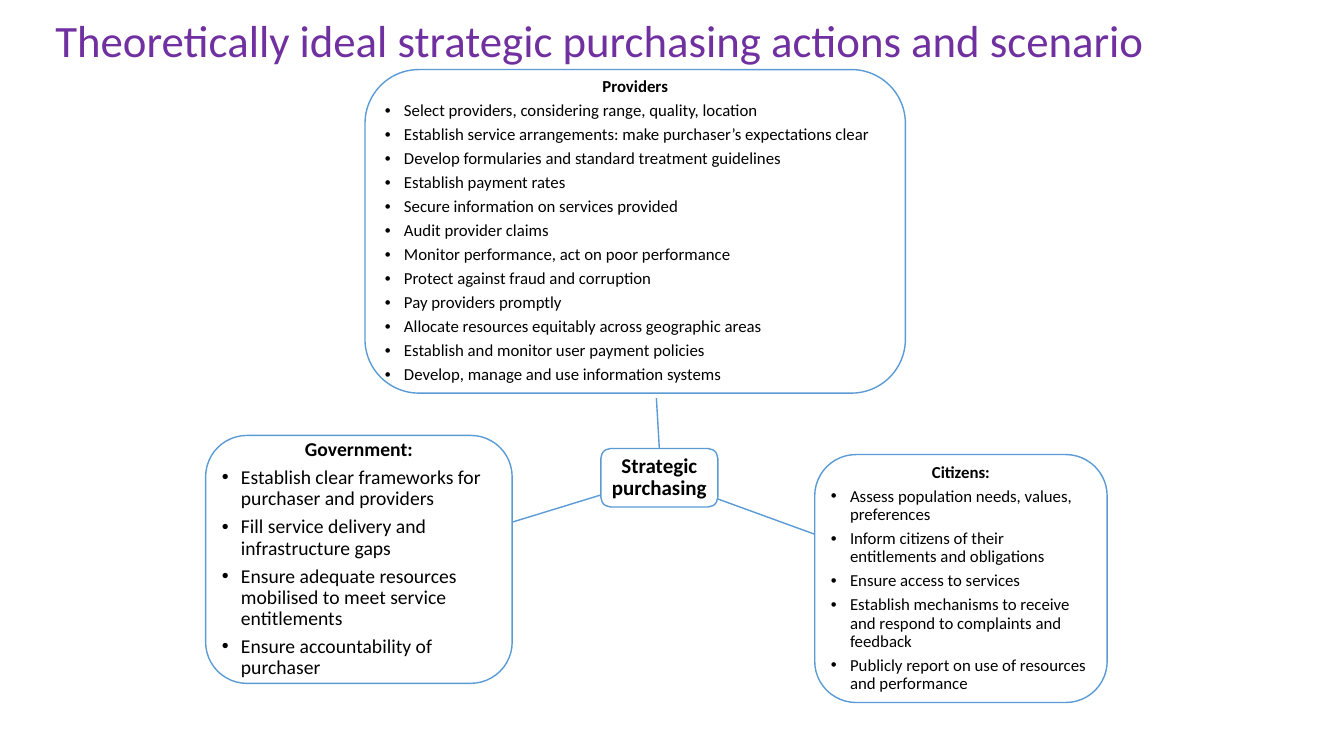
"""Build a slide mapping strategic purchasing actions to providers, citizens and government."""
from lxml import etree
from pptx import Presentation
from pptx import util as u
from pptx.dml.color import RGBColor
from pptx.enum import shapes, text
from pptx.oxml.ns import qn

COLOURS = {"title": "7030A0", "outline": "5B9BD5", "body": "000000"}
INDENT = u.Inches(0.19)

deck = Presentation()
deck.slide_width, deck.slide_height = u.Inches(13.33), u.Inches(7.5)
page = deck.slides.add_slide(deck.slide_layouts[6])


def share(*percents):
    """Turn alternating width and height percentages into lengths."""
    sides = (deck.slide_width, deck.slide_height)
    return [u.Emu(round(sides[i % 2] * percent / 100)) for i, percent in enumerate(percents)]


def write(para, words, size, colour="body", bold=False, bullet=False, centred=False, after=0.35):
    """Write one formatted paragraph."""
    para.line_spacing = 0.9
    para.space_after = u.Pt(size * after)
    para.alignment = text.PP_ALIGN.CENTER if centred else text.PP_ALIGN.LEFT
    span = para.add_run()
    span.text = words
    span.font.name, span.font.size, span.font.bold = "Calibri", u.Pt(size), bold
    span.font.color.rgb = RGBColor.from_string(COLOURS[colour])
    if bullet:
        settings = para._p.get_or_add_pPr()
        settings.set("marL", str(INDENT))
        settings.set("indent", str(-INDENT))
        etree.SubElement(settings, qn("a:buFont")).set("typeface", "Arial")
        etree.SubElement(settings, qn("a:buChar")).set("char", "•")


title = page.shapes.add_textbox(*share(3.38, -1.07, 96.62, 13.6)).text_frame
title.word_wrap = True
title.vertical_anchor = text.MSO_ANCHOR.MIDDLE
write(title.paragraphs[0], "Theoretically ideal strategic purchasing actions and scenario",
      size=32, colour="title", after=0)

groups = [
    ("Strategic purchasing", 15, (44.71, 59.33, 8.7, 7.73), []),
    ("Providers", 12, (27.16, 9.2, 40.21, 42.8), [
        "Select providers, considering range, quality, location",
        "Establish service arrangements: make purchaser’s expectations clear",
        "Develop formularies and standard treatment guidelines",
        "Establish payment rates",
        "Secure information on services provided",
        "Audit provider claims",
        "Monitor performance, act on poor performance",
        "Protect against fraud and corruption",
        "Pay providers promptly",
        "Allocate resources equitably across geographic areas",
        "Establish and monitor user payment policies",
        "Develop, manage and use information systems",
    ]),
    ("Citizens:", 12, (60.62, 60.13, 21.76, 32.8), [
        "Assess population needs, values, preferences",
        "Inform citizens of their entitlements and obligations",
        "Ensure access to services",
        "Establish mechanisms to receive and respond to complaints and feedback",
        "Publicly report on use of resources and performance",
    ]),
    ("Government:", 14, (15.3, 57.6, 22.81, 32.8), [
        "Establish clear frameworks for purchaser and providers",
        "Fill service delivery and infrastructure gaps",
        "Ensure adequate resources mobilised to meet service entitlements",
        "Ensure accountability of purchaser",
    ]),
]
boxes = {}
for heading, size, place, actions in groups:
    box = page.shapes.add_shape(shapes.MSO_SHAPE.ROUNDED_RECTANGLE, *share(*place))
    box.shadow.inherit = False
    box.fill.background()
    box.line.color.rgb = RGBColor.from_string(COLOURS["outline"])
    box.line.width = u.Pt(1)
    frame = box.text_frame
    frame.word_wrap = True
    frame.vertical_anchor = text.MSO_ANCHOR.MIDDLE
    frame.margin_left = frame.margin_right = u.Inches(0.04)
    frame.margin_top = frame.margin_bottom = u.Inches(0.04)
    write(frame.paragraphs[0], heading, size=size, bold=True, centred=True)
    for action in actions:
        write(frame.add_paragraph(), action, size=size, bullet=True)
    boxes[heading] = box

spokes = {
    "Providers": (49.06, 59.33, 48.84, 52.67),
    "Citizens:": (53.41, 66, 60.62, 70.67),
    "Government:": (44.71, 65.47, 38.11, 69.07),
}
for target, ends in spokes.items():
    spoke = page.shapes.add_connector(shapes.MSO_CONNECTOR.STRAIGHT, *share(*ends))
    spoke.line.color.rgb = RGBColor.from_string(COLOURS["outline"])
    spoke.line.width = u.Pt(1)
    etree.SubElement(spoke._element.spPr, qn("a:effectLst"))
    if target == "Providers":
        spoke.begin_connect(boxes["Strategic purchasing"], 0)

deck.save("out.pptx")
